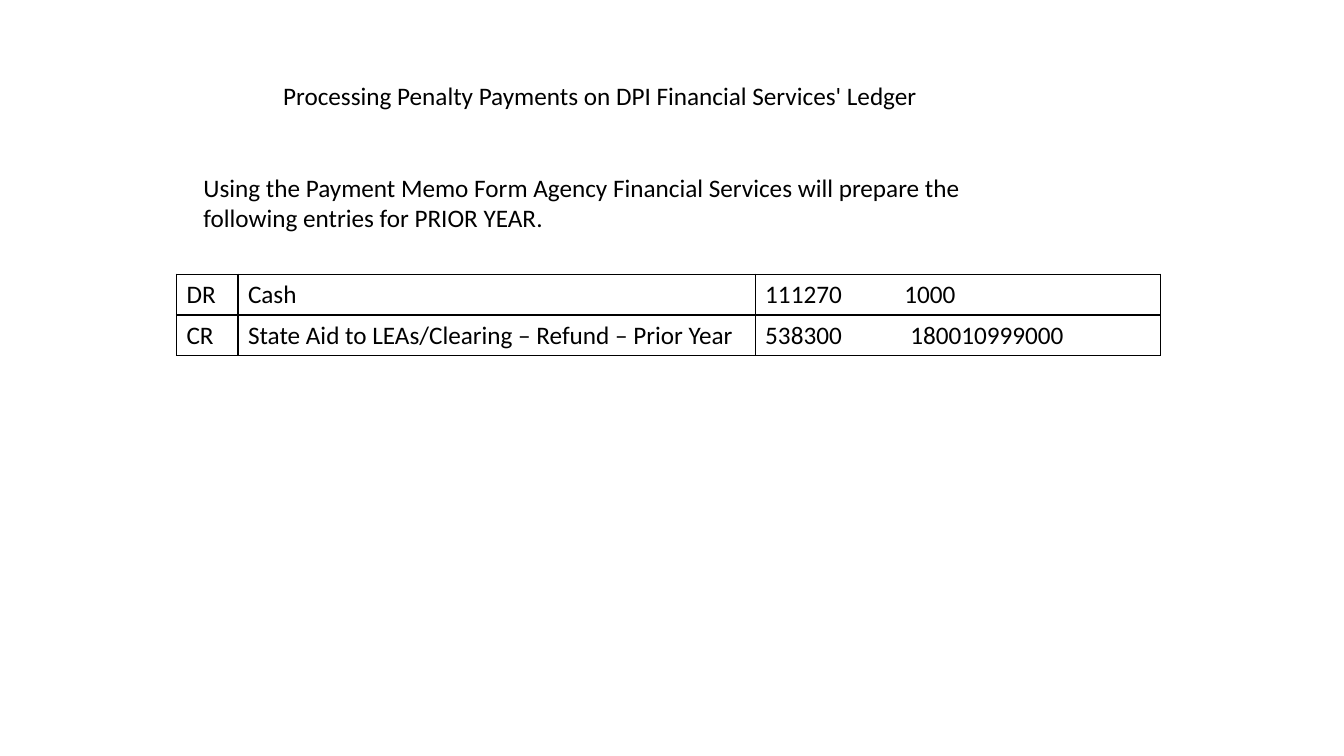
from lxml import etree
from pptx import Presentation
from pptx.dml.color import RGBColor
from pptx.enum import text
from pptx.oxml import ns
from pptx.util import Inches, Pt

ink = {"text": "000000", "rule": "000000"}
wide, high = Inches(13.33), Inches(7.5)

deck = Presentation()
deck.slide_width, deck.slide_height = wide, high
slide = deck.slides.add_slide(deck.slide_layouts[6])


def style(para):
    para.font.name = "Calibri"
    para.font.size = Pt(18)
    para.font.color.rgb = RGBColor.from_string(ink["text"])


def add(parent, tag, **attrs):
    return etree.SubElement(parent, ns.qn(tag), **attrs)


box = slide.shapes.add_textbox(
    int(wide * 0.144), int(high * 0.1), int(wide * 0.605), int(high * 0.216))
frame = box.text_frame
frame.word_wrap = True
frame.auto_size = text.MSO_AUTO_SIZE.SHAPE_TO_FIT_TEXT
frame.text = (
    "Processing Penalty Payments on DPI Financial Services' Ledger\n"
    "Using the Payment Memo Form Agency Financial Services will prepare the "
    "following entries for PRIOR YEAR.")
title, intro = frame.paragraphs
title.alignment = text.PP_ALIGN.CENTER
intro.space_before = Pt(44)
for para in frame.paragraphs:
    style(para)

rows = [
    ("DR", "Cash", "111270\t1000", 1.38),
    ("CR", "State Aid to LEAs/Clearing – Refund – Prior Year",
     "538300\t180010999000", 1.44),
]
cols = [0.61, 5.13, 4.02]
tall = 0.405
grid = slide.shapes.add_table(
    len(rows), len(cols), Inches(1.75), Inches(2.72),
    Inches(sum(cols)), Inches(tall * len(rows))).table
grid.first_row = grid.horz_banding = False
for col, size in zip(grid.columns, cols):
    col.width = Inches(size)

for r, (*words, stop) in enumerate(rows):
    grid.rows[r].height = Inches(tall)
    for c, word in enumerate(words):
        cell = grid.cell(r, c)
        cell.text = word
        para = cell.text_frame.paragraphs[0]
        if "\t" in word:
            tabs = add(para._p.get_or_add_pPr(), "a:tabLst")
            add(tabs, "a:tab", pos=str(Inches(stop)), algn="l")
        style(para)
        props = cell._tc.get_or_add_tcPr()
        for side in "LRTB":
            line = add(props, f"a:ln{side}", w=str(Pt(1)))
            add(add(line, "a:solidFill"), "a:srgbClr", val=ink["rule"])
        cell.fill.background()

deck.save("out.pptx")
